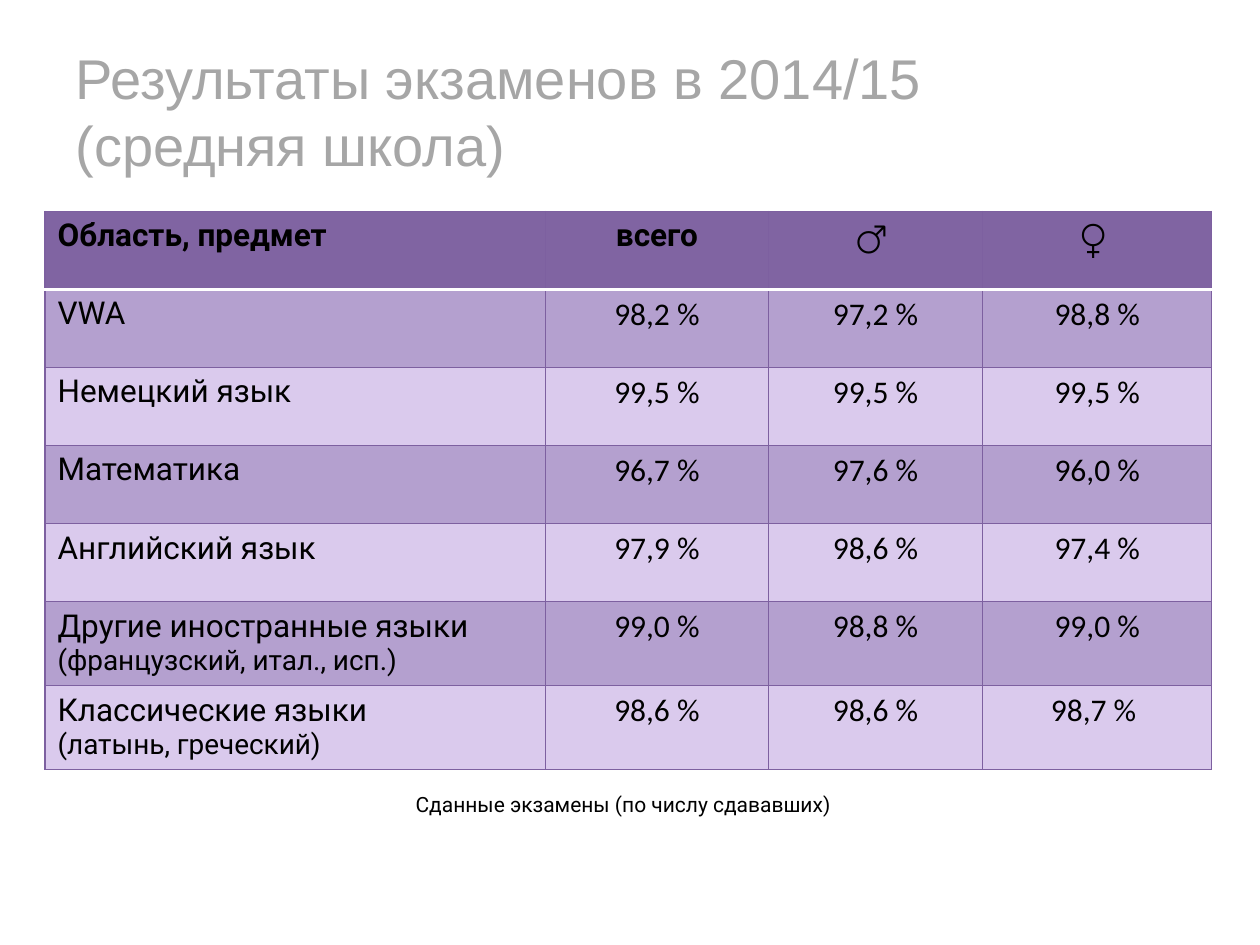
from lxml import etree
from pptx import Presentation
from pptx.dml.color import RGBColor
from pptx.enum import text
from pptx.oxml.ns import qn
from pptx.util import Pt

GREY = RGBColor(0xA6, 0xA6, 0xA6)
BLACK = RGBColor(0, 0, 0)
WHITE = RGBColor(0xFF, 0xFF, 0xFF)
HEAD = RGBColor(0x80, 0x64, 0xA2)
DARK = RGBColor(0xB4, 0xA0, 0xCF)
LIGHT = RGBColor(0xDA, 0xCA, 0xED)
EDGE = RGBColor(0x7D, 0x60, 0xA0)


def write(para, words, size, face, color=BLACK, bold=False):
    run = para.add_run()
    run.text = words
    font = run.font
    font.size = Pt(size)
    font.name = face
    font.bold = bold
    font.color.rgb = color


def border(cell, below, width):
    props = cell._tc.get_or_add_tcPr()
    for spot, side in enumerate(("lnL", "lnR", "lnT", "lnB")):
        color, wide = (below, width) if side == "lnB" else (EDGE, 0.75)
        line = etree.Element(qn("a:" + side), w=str(Pt(wide)))
        fill = etree.SubElement(line, qn("a:solidFill"))
        etree.SubElement(fill, qn("a:srgbClr"), val=str(color))
        props.insert(spot, line)


deck = Presentation()
deck.slide_width = Pt(720)
deck.slide_height = Pt(540)
slide = deck.slides.add_slide(deck.slide_layouts[6])

frame = slide.shapes.add_textbox(Pt(36), Pt(18), Pt(648), Pt(90)).text_frame
frame.word_wrap = True
frame.vertical_anchor = text.MSO_ANCHOR.MIDDLE
para = frame.paragraphs[0]
write(para, "Результаты экзаменов в 2014/15", 32, "Arial", GREY)
para.add_line_break()
write(para, "(средняя школа)", 32, "Arial", GREY)

rows = [
    (["VWA"], "98,2 %", "97,2 %", "98,8 %"),
    (["Немецкий язык"], "99,5 %", "99,5 %", "99,5 %"),
    (["Математика"], "96,7 %", "97,6 %", "96,0 %"),
    (["Английский язык"], "97,9 %", "98,6 %", "97,4 %"),
    (["Другие иностранные языки", "(французский, итал., исп.)"],
     "99,0 %", "98,8 %", "99,0 %"),
    (["Классические языки", "(латынь, греческий)"],
     "98,6 %", "98,6 %", "98,7 % "),
]
widths = [286, 127.4, 122.4, 131]
high = 44.6
count = len(rows) + 1
table = slide.shapes.add_table(
    count, len(widths), Pt(25.7), Pt(120.8), Pt(sum(widths)), Pt(high * count)
).table
for col, width in zip(table.columns, widths):
    col.width = Pt(width)
for row in table.rows:
    row.height = Pt(high)

heads = [
    ("Область, предмет", 18, "Roboto", True),
    ("всего", 18, "Roboto", True),
    ("♂ ", 20, "Calibri", False),
    ("♀ ", 20, "Calibri", True),
]
for cell, (words, size, face, bold) in zip(table.rows[0].cells, heads):
    write(cell.text_frame.paragraphs[0], words, size, face, bold=bold)

for r, (names, *marks) in enumerate(rows, 1):
    frame = table.cell(r, 0).text_frame
    write(frame.paragraphs[0], names[0], 18, "Roboto")
    for note in names[1:]:
        write(frame.add_paragraph(), note, 16, "Roboto")
    for c, mark in enumerate(marks, 1):
        write(table.cell(r, c).text_frame.paragraphs[0], mark, 18, "Calibri")

for r in range(count):
    for c in range(len(widths)):
        cell = table.cell(r, c)
        cell.fill.solid()
        cell.fill.fore_color.rgb = HEAD if r == 0 else DARK if r % 2 else LIGHT
        if r == 0:
            border(cell, WHITE, 2)
        else:
            border(cell, EDGE, 0.75)
        if c:
            cell.text_frame.paragraphs[0].alignment = text.PP_ALIGN.CENTER
for cell in table.rows[1].cells:
    top = cell._tc.tcPr.find(qn("a:lnT"))
    top.set("w", str(Pt(2)))
    top.find(".//" + qn("a:srgbClr")).set("val", str(WHITE))

frame = slide.shapes.add_textbox(Pt(230.4), Pt(448.6), Pt(252.7), Pt(21.6)).text_frame
frame.word_wrap = False
frame.auto_size = text.MSO_AUTO_SIZE.SHAPE_TO_FIT_TEXT
write(frame.paragraphs[0], "Сданные экзамены (по числу сдававших)", 12, "Roboto")

deck.save("out.pptx")
